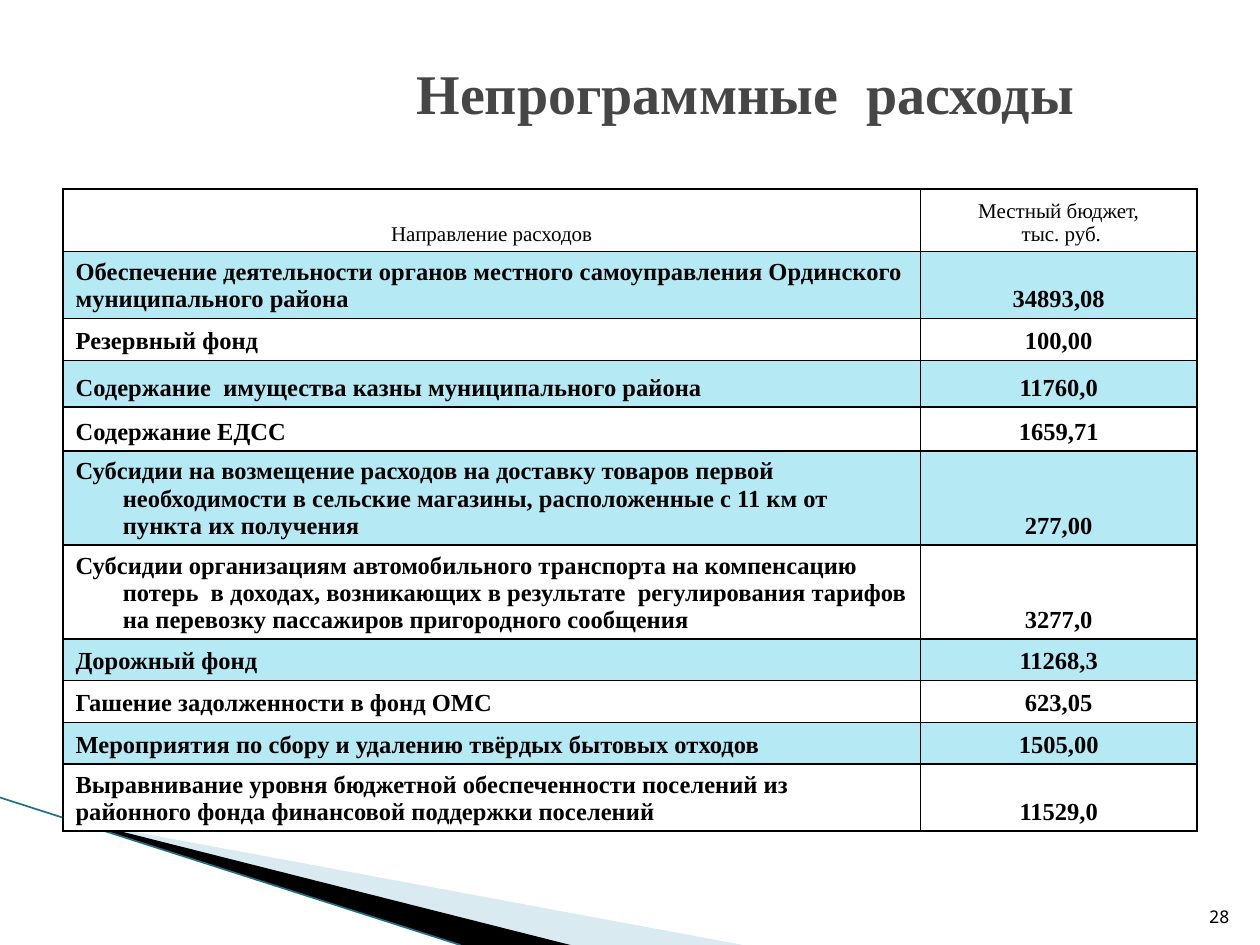
from dataclasses import dataclass

from lxml import etree
from pptx import Presentation, util as u
from pptx.dml.color import RGBColor
from pptx.enum import shapes, text
from pptx.oxml.ns import qn

WHITE = RGBColor(0xFF, 0xFF, 0xFF)
BLACK = RGBColor(0, 0, 0)
GREY = RGBColor(0x46, 0x46, 0x46)
AQUA = RGBColor(0xB5, 0xE9, 0xF4)
PALE = RGBColor(0xA0, 0xCB, 0xDC)
TEAL = RGBColor(0x1F, 0x6F, 0x85)
SERIF, MONO = "Times New Roman", "Noto Sans Mono"
LEFT, MID, RIGHT = text.PP_ALIGN.LEFT, text.PP_ALIGN.CENTER, text.PP_ALIGN.RIGHT
LOW = text.MSO_ANCHOR.BOTTOM


@dataclass
class Row:
    name: str
    sum: str
    tall: float
    hang: float = 0


@dataclass
class Wedge:
    points: list
    fill: RGBColor
    alpha: int = 100


HEAD = Row("Направление расходов", "Местный бюджет,\n тыс. руб.", 35.75)
ROWS = [
    Row("Обеспечение деятельности органов местного самоуправления "
        "Ординского муниципального района", "34893,08", 38.25),
    Row("Резервный фонд", "100,00", 24),
    Row("Содержание  имущества казны муниципального района", "11760,0", 26.75, 27),
    Row("Содержание ЕДСС", "1659,71", 25, 27),
    Row("Субсидии на возмещение расходов на доставку товаров первой "
        "необходимости в сельские магазины, расположенные с 11 км от "
        "пункта их получения", "277,00", 53.75, 27),
    Row("Субсидии организациям автомобильного транспорта на компенсацию "
        "потерь  в доходах, возникающих в результате  регулирования тарифов "
        "на перевозку пассажиров пригородного сообщения", "3277,0", 53.75, 27),
    Row("Дорожный фонд", "11268,3", 23.75),
    Row("Гашение задолженности в фонд ОМС", "623,05", 24),
    Row("Мероприятия по сбору и удалению твёрдых бытовых отходов", "1505,00", 23.75, 27),
    Row("Выравнивание уровня бюджетной обеспеченности поселений из "
        "районного фонда финансовой поддержки поселений", "11529,0", 38.25),
]
WEDGES = [
    Wedge([(39.6, 468.5), (424.5, 540), (325.5, 540), (39.6, 468)], PALE, 40),
    Wedge([(38.2, 467.3), (326, 540), (263.5, 540), (38.9, 468)], BLACK),
]


def write(frame, words: str, size: float, font: str = SERIF, color=BLACK,
          bold: bool = False, align=LEFT, hang: float = 0) -> None:
    """Fill a text frame, one paragraph per line of words."""
    frame.word_wrap = True
    for i, line in enumerate(words.split("\n")):
        para = frame.add_paragraph() if i else frame.paragraphs[0]
        para.alignment = align
        if hang:
            props = para._p.get_or_add_pPr()
            props.set("marL", str(u.Pt(hang)))
            props.set("indent", str(-u.Pt(hang)))
        run = para.add_run()
        run.text = line
        run.font.name, run.font.size, run.font.bold = font, u.Pt(size), bold
        run.font.color.rgb = color


def draw_wedge(slide, wedge: Wedge) -> None:
    points = [(u.Pt(x), u.Pt(y)) for x, y in wedge.points]
    pen = slide.shapes.build_freeform(*points[0], scale=1.0)
    pen.add_line_segments(points[1:], close=True)
    shape = pen.convert_to_shape()
    shape.shadow.inherit = False
    shape.line.fill.background()
    shape.fill.solid()
    shape.fill.fore_color.rgb = wedge.fill
    if wedge.alpha < 100:
        tone = shape._element.spPr.find(qn("a:solidFill"))[0]
        etree.SubElement(tone, qn("a:alpha")).set("val", str(wedge.alpha * 1000))


def frame_cell(cell, fill: RGBColor) -> None:
    """Colour a cell, set its padding and rule its four sides."""
    cell.fill.solid()
    cell.fill.fore_color.rgb = fill
    cell.vertical_anchor = LOW
    cell.margin_top, cell.margin_bottom = u.Pt(0), u.Pt(3.2)
    props = cell._tc.get_or_add_tcPr()
    for i, side in enumerate("LRTB"):
        edge = etree.Element(qn(f"a:ln{side}"), w=str(u.Pt(1)))
        paint = etree.SubElement(edge, qn("a:solidFill"))
        etree.SubElement(paint, qn("a:srgbClr")).set("val", str(BLACK))
        props.insert(i, edge)


def draw_table(slide, rows: list[Row]) -> None:
    grid = slide.shapes.add_table(
        len(rows), 2, u.Pt(36), u.Pt(108), u.Pt(648),
        u.Pt(sum(row.tall for row in rows))).table
    grid.first_row = grid.horz_banding = False
    for col, wide in zip(grid.columns, (490, 158)):
        col.width = u.Pt(wide)
    for i, row in enumerate(rows):
        grid.rows[i].height = u.Pt(row.tall)
        for j, words in enumerate((row.name, row.sum)):
            cell = grid.cell(i, j)
            frame_cell(cell, AQUA if i % 2 else WHITE)
            write(cell.text_frame, words, size=14 if i else 12, bold=i > 0,
                  align=LEFT if i and j == 0 else MID, hang=row.hang)


def main() -> None:
    deck = Presentation()
    deck.slide_width, deck.slide_height = u.Pt(720), u.Pt(540)
    slide = deck.slides.add_slide(deck.slide_layouts[5])

    # Title
    title = slide.shapes.title
    title.left, title.top = u.Pt(167.75), u.Pt(21.5)
    title.width, title.height = u.Pt(516.5), u.Pt(62.75)
    title.fill.solid()
    title.fill.fore_color.rgb = WHITE
    title.text_frame.vertical_anchor = text.MSO_ANCHOR.MIDDLE
    write(title.text_frame, "Непрограммные  расходы", size=32, color=GREY,
          bold=True, align=MID)

    # Corner wedges and their edge
    for wedge in WEDGES:
        draw_wedge(slide, wedge)
    edge = slide.shapes.add_connector(
        shapes.MSO_CONNECTOR.STRAIGHT, u.Pt(0), u.Pt(455.75), u.Pt(263), u.Pt(540))
    edge.line.color.rgb = TEAL
    edge.line.width = u.Pt(0.95)
    etree.SubElement(edge._element.spPr, qn("a:effectLst"))

    # Page number
    page = slide.shapes.add_textbox(u.Pt(681), u.Pt(504.75), u.Pt(28.8), u.Pt(28.8))
    page.text_frame.vertical_anchor = LOW
    write(page.text_frame, "28", size=10, font=MONO, align=RIGHT)

    # Spending table
    draw_table(slide, [HEAD, *ROWS])
    deck.save("out.pptx")


if __name__ == "__main__":
    main()
